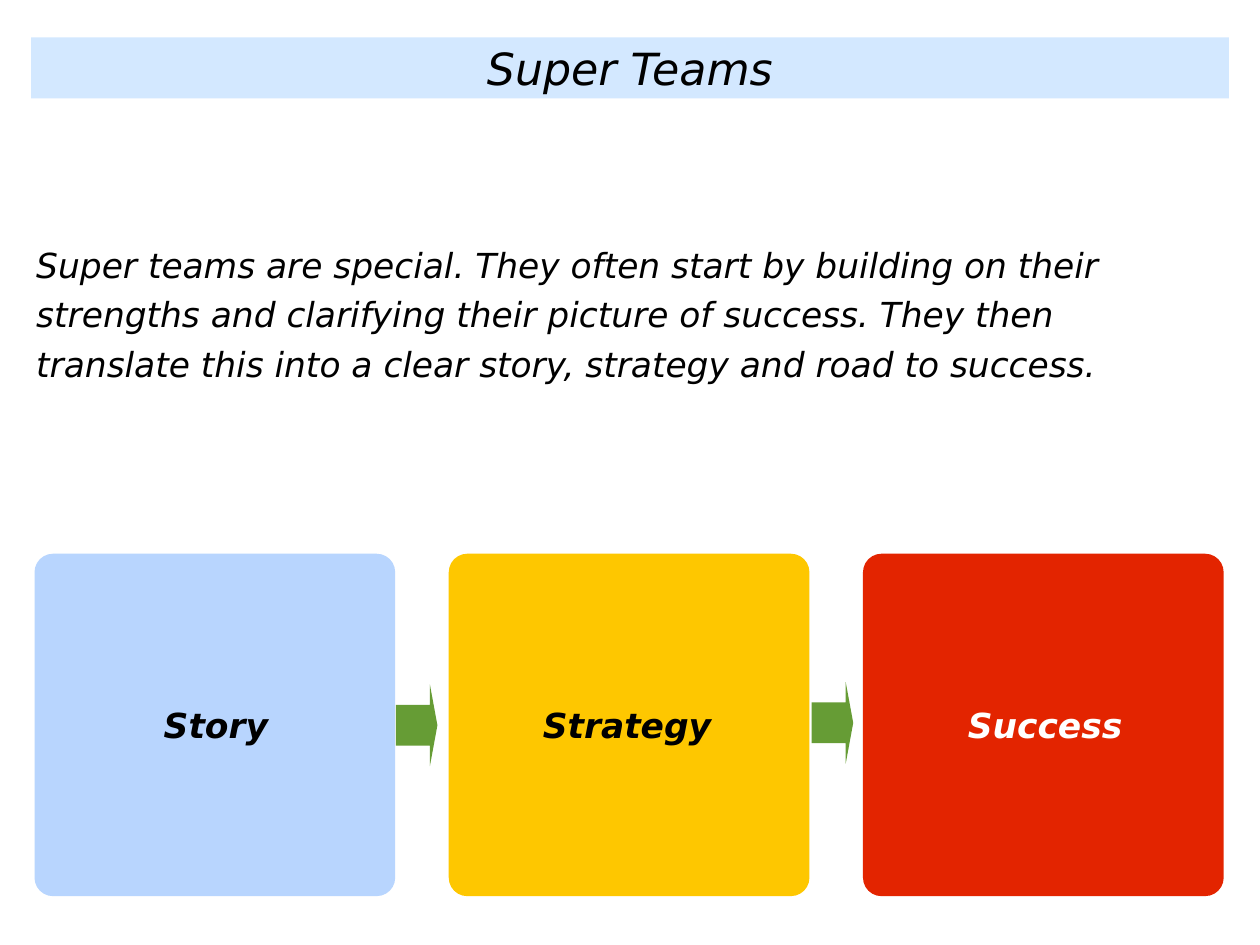
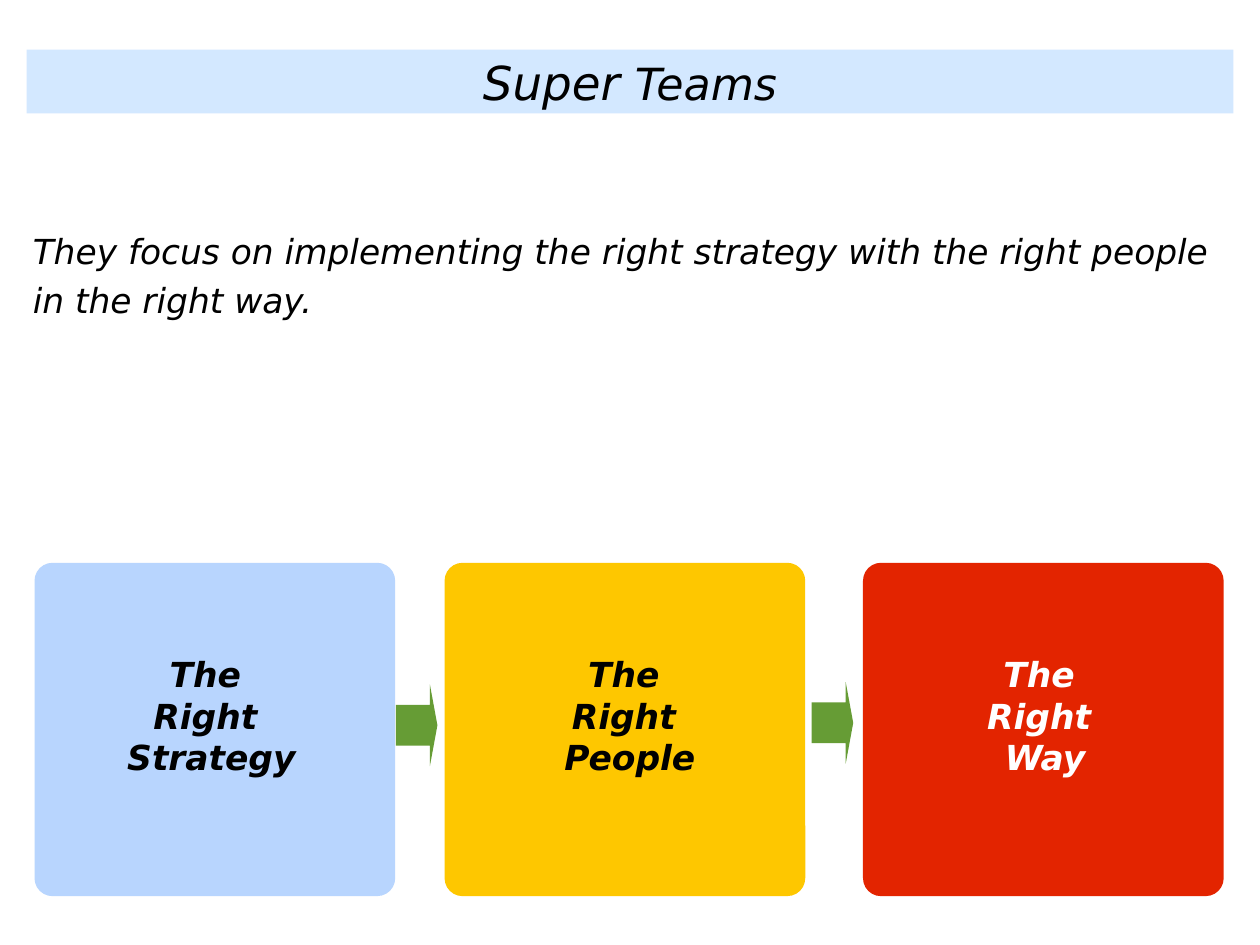
from dataclasses import dataclass

from pptx import Presentation
from pptx.dml.color import RGBColor
from pptx.enum.shapes import MSO_SHAPE
from pptx.enum.text import MSO_ANCHOR, MSO_AUTO_SIZE, PP_ALIGN
from pptx.util import Cm, Pt


@dataclass(frozen=True)
class Theme:
    font: str = "DejaVu Sans"
    title_size: int = 36
    text_size: int = 28
    black: str = "000000"
    white: str = "FFFFFF"
    band: str = "D3E8FF"
    arrow: str = "669C35"
    cards: tuple = (("B8D5FE", "000000"), ("FEC700", "000000"), ("E32400", "FFFFFF"))


THEME = Theme()

# Lengths are in centimetres; a box is left, top, width, height.
SLIDE_WIDTH, SLIDE_HEIGHT = 36.12, 27.1
INSET = 0.1
CARD_LEFT, CARD_RIGHT, CARD_BOTTOM = 0.99, 35.08, 25.7
CARD_WIDTH = 10.34
ARROWS = [(11.35, 19.63, 1.19, 2.34), (23.27, 19.56, 1.19, 2.34)]

# label_shifts moves each label sideways, label_lift moves them all up.
SLIDES = [
    {
        "title": [("Super Teams", THEME.title_size)],
        "band": {"margin": 0.89, "top": 1.07, "height": 1.75},
        "body": "Super teams are special. They often start by building on their strengths "
                "and clarifying their picture of success. They then translate this into "
                "a clear story, strategy and road to success.",
        "body_box": (0.94, 6.65, 33.91, 4.29),
        "labels": [["Story"], ["Strategy"], ["Success"]],
        "card_top": 15.88,
        "middle_shift": 0,
        "label_shifts": (0.03, -0.06, 0.05),
        "label_lift": 0,
    },
    {
        "title": [("Super ", 38), ("Teams", THEME.title_size)],
        "band": {"margin": 0.76, "top": 1.42, "height": 1.83},
        "body": "They focus on implementing the right strategy with the right people "
                "in the right way.",
        "body_box": (0.84, 6.25, 34.47, 3.33),
        "labels": [["The ", "Right ", last] for last in ("Strategy", "People", "Way")],
        "card_top": 16.14,
        "middle_shift": -0.12,
        "label_shifts": (-0.1, 0.14, 0.05),
        "label_lift": 0.4,
    },
]


def write_text(shape, paragraphs, *, color=THEME.black, bold=False, align=PP_ALIGN.CENTER,
               anchor=MSO_ANCHOR.MIDDLE, spacing=1.0, shift=0, lift=0):
    """Fill a shape with paragraphs, each a list of (text, size) runs."""
    frame = shape.text_frame
    frame.word_wrap = True
    frame.auto_size = MSO_AUTO_SIZE.NONE
    frame.vertical_anchor = anchor
    frame.margin_left = Cm(INSET + max(0, 2 * shift))
    frame.margin_right = Cm(INSET + max(0, -2 * shift))
    frame.margin_top = Cm(INSET)
    frame.margin_bottom = Cm(INSET + 2 * lift)
    for index, runs in enumerate(paragraphs):
        paragraph = frame.add_paragraph() if index else frame.paragraphs[0]
        paragraph.alignment = align
        paragraph.line_spacing = spacing
        for text, size in runs:
            run = paragraph.add_run()
            run.text = text
            font = run.font
            font.name, font.size = THEME.font, Pt(size)
            font.bold, font.italic = bold, True
            font.color.rgb = RGBColor.from_string(color)


def paint(shape, color):
    shape.fill.solid()
    shape.fill.fore_color.rgb = RGBColor.from_string(color)
    shape.line.fill.background()


def add_block(slide, preset, box, color, adjustments):
    shape = slide.shapes.add_shape(preset, *map(Cm, box))
    shape.shadow.inherit = False
    paint(shape, color)
    for index, value in enumerate(adjustments):
        shape.adjustments[index] = value
    return shape


def add_title(slide, runs, margin, top, height):
    title = slide.shapes.title
    title.left, title.top = Cm(margin), Cm(top)
    title.width, title.height = Cm(SLIDE_WIDTH - 2 * margin), Cm(height)
    paint(title, THEME.band)
    write_text(title, [runs])


def add_cards(slide, content):
    top = content["card_top"]
    pitch = (CARD_RIGHT - CARD_LEFT - CARD_WIDTH) / 2
    offsets = (0, content["middle_shift"], 0)
    columns = zip(content["labels"], THEME.cards, offsets, content["label_shifts"])
    for index, (lines, (fill, color), offset, shift) in enumerate(columns):
        box = (CARD_LEFT + index * pitch + offset, top, CARD_WIDTH, CARD_BOTTOM - top)
        card = add_block(slide, MSO_SHAPE.ROUNDED_RECTANGLE, box, fill, [0.054])
        write_text(card, [[(line, THEME.text_size)] for line in lines], color=color,
                   bold=True, shift=shift, lift=content["label_lift"])


def build_slide(presentation, content):
    slide = presentation.slides.add_slide(presentation.slide_layouts[5])
    add_title(slide, content["title"], **content["band"])
    body = slide.shapes.add_textbox(*map(Cm, content["body_box"]))
    write_text(body, [[(content["body"], THEME.text_size)]], align=PP_ALIGN.LEFT,
               anchor=MSO_ANCHOR.TOP, spacing=1.2)
    add_cards(slide, content)
    for box in ARROWS:
        add_block(slide, MSO_SHAPE.RIGHT_ARROW, box, THEME.arrow, [0.5, 0.18])


def main():
    presentation = Presentation()
    presentation.slide_width = Cm(SLIDE_WIDTH)
    presentation.slide_height = Cm(SLIDE_HEIGHT)
    for content in SLIDES:
        build_slide(presentation, content)
    presentation.save("out.pptx")


if __name__ == "__main__":
    main()
